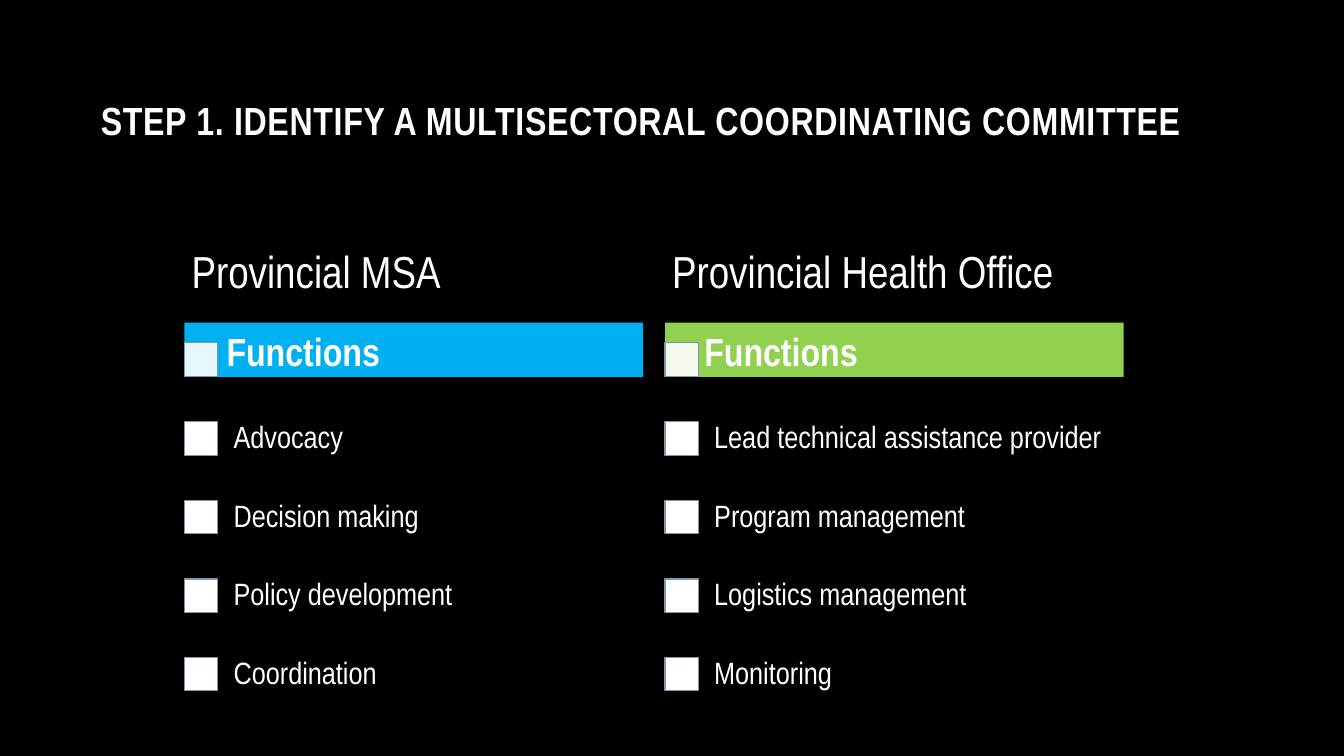
from lxml import etree
from pptx import Presentation
from pptx.dml.color import RGBColor
from pptx.enum.shapes import MSO_SHAPE
from pptx.enum.text import MSO_ANCHOR
from pptx.oxml.ns import qn
from pptx.util import Cm, Pt

RECT = MSO_SHAPE.RECTANGLE
TOP, MIDDLE, BOTTOM = MSO_ANCHOR.TOP, MSO_ANCHOR.MIDDLE, MSO_ANCHOR.BOTTOM
FONT = "Arial Narrow"
WHITE, BLACK, OUTLINE = "FFFFFF", "000000", "7E97AD"

TITLE = "STEP 1. IDENTIFY A MULTISECTORAL COORDINATING COMMITTEE"
BAR_LABEL = "Functions"
# heading, bar colour, left edge, left edge of the bar label, functions
COLUMNS = [
    ("Provincial MSA", "00B0F0", 4.65, 5.46,
     ["Advocacy", "Decision making", "Policy development", "Coordination"]),
    ("Provincial Health Office", "92D050", 16.76, 17.5,
     ["Lead technical assistance provider", "Program management",
      "Logistics management", "Monitoring"]),
]

# Lengths in centimetres
COLUMN_W = 11.56
HEADING_Y, HEADING_H = 5.69, 2.44
BAR_Y, BAR_H = 8.13, 1.37
BOX, BAR_BOX_Y = 0.84, 8.64
ROW_Y, ROW_H = 10.06, 1.98
INDENT = 0.81


def color(hex_code):
    return RGBColor.from_string(hex_code)


def add_text(slide, text, x, y, w, h, size, bold=False, anchor=TOP,
             insets=(0.25, 0.13), line_spacing=None, tracking=None):
    """Add a one-line text box; insets are (horizontal, vertical) in cm."""
    tf = slide.shapes.add_textbox(Cm(x), Cm(y), Cm(w), Cm(h)).text_frame
    tf.word_wrap = True
    tf.vertical_anchor = anchor
    tf.margin_left = tf.margin_right = Cm(insets[0])
    tf.margin_top = tf.margin_bottom = Cm(insets[1])
    p = tf.paragraphs[0]
    if line_spacing:
        p.line_spacing = line_spacing
    r = p.add_run()
    r.text = text
    r.font.name = FONT
    r.font.size = Pt(size)
    r.font.bold = bold
    r.font.color.rgb = color(WHITE)
    if tracking:
        r._r.get_or_add_rPr().set("spc", str(int(tracking * 100)))


def add_rect(slide, x, y, w, h, fill, line=None, opacity=None):
    sp = slide.shapes.add_shape(RECT, Cm(x), Cm(y), Cm(w), Cm(h))
    sp.shadow.inherit = False
    sp.fill.solid()
    sp.fill.fore_color.rgb = color(fill)
    if opacity:
        clr = sp._element.spPr.find(qn("a:solidFill")).find(qn("a:srgbClr"))
        etree.SubElement(clr, qn("a:alpha")).set("val", str(opacity * 1000))
    if line:
        sp.line.color.rgb = color(line)
        sp.line.width = Pt(0.85)
    else:
        sp.line.fill.background()


def add_column(slide, heading, fill, x, label_x, functions):
    add_rect(slide, x, BAR_Y, COLUMN_W, BAR_H, fill)
    add_rect(slide, x, BAR_BOX_Y, BOX, BOX, WHITE, OUTLINE, opacity=90)
    add_text(slide, heading, x, HEADING_Y, COLUMN_W, HEADING_H, 32,
             anchor=MIDDLE, insets=(0.18, 0.1), line_spacing=0.9)
    for i, function in enumerate(functions):
        y = ROW_Y + i * ROW_H
        add_rect(slide, x, y + (ROW_H - BOX) / 2, BOX, BOX, WHITE, OUTLINE)
        add_text(slide, function, x + INDENT, y, COLUMN_W - INDENT, ROW_H, 22,
                 anchor=MIDDLE, insets=(0.43, 0.43), line_spacing=0.9)
    add_text(slide, BAR_LABEL, label_x, BAR_Y, 10.26, 1.45, 28, bold=True)


def main():
    prs = Presentation()
    prs.slide_width, prs.slide_height = Cm(33.87), Cm(19.05)
    slide = prs.slides.add_slide(prs.slide_layouts[6])
    slide.background.fill.solid()
    slide.background.fill.fore_color.rgb = color(BLACK)
    add_text(slide, TITLE, 2.29, 1.4, 29.36, 2.34, 28, bold=True,
             anchor=BOTTOM, tracking=0.5)
    for column in COLUMNS:
        add_column(slide, *column)
    prs.save("out.pptx")


if __name__ == "__main__":
    main()
